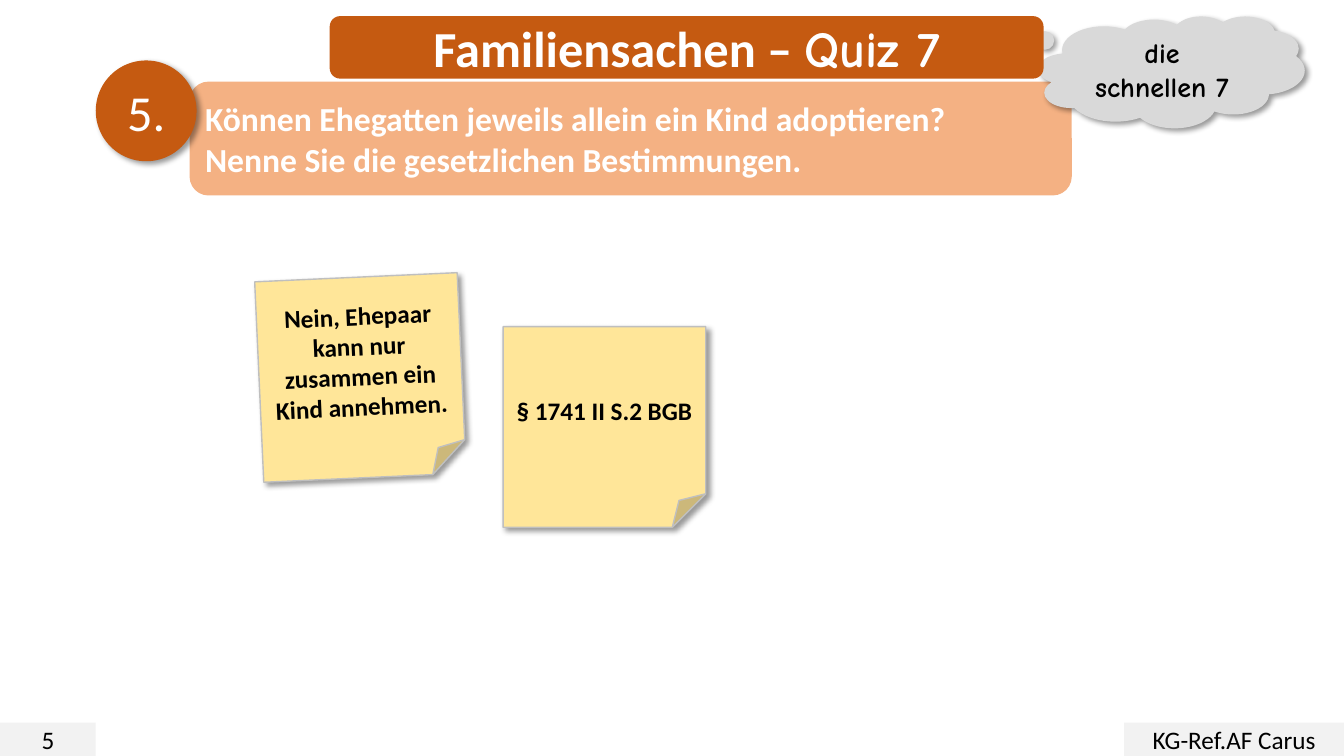
from lxml.etree import SubElement
from pptx import Presentation
from pptx.dml.color import RGBColor
from pptx.enum.shapes import MSO_SHAPE as Shape
from pptx.enum.text import MSO_ANCHOR as Anchor, PP_ALIGN as Align
from pptx.oxml.ns import qn
from pptx.util import Inches, Pt

COLORS = {
    "title": "C55A11",
    "question": "F4B183",
    "cloud": "D9D9D9",
    "note": "FFE699",
    "note_edge": "BFBFBF",
    "footer": "F2F2F2",
    "light": "FFFFFF",
    "dark": "000000",
}
BODY_FONT, COMIC_FONT = "Calibri", "Comic Neue"


def rgb(name):
    return RGBColor.from_string(COLORS[name])


class QuizSlide:
    def __init__(self, presentation):
        self.slide = presentation.slides.add_slide(presentation.slide_layouts[6])

    def box(self, kind, bounds, fill, parent=None):
        shapes = (parent or self.slide).shapes
        shape = shapes.add_shape(kind, *map(Inches, bounds))
        shape.shadow.inherit = False
        shape.fill.solid()
        shape.fill.fore_color.rgb = rgb(fill)
        shape.line.fill.background()
        return shape

    def label(self, shape, paragraphs, size, color="dark", bold=False, align=Align.CENTER):
        """Fill the shape with paragraphs, each a list of (text, font name) runs."""
        frame = shape.text_frame
        frame.word_wrap = True
        frame.vertical_anchor = Anchor.MIDDLE
        for index, runs in enumerate(paragraphs):
            paragraph = frame.add_paragraph() if index else frame.paragraphs[0]
            paragraph.alignment = align
            for text, font_name in runs:
                run = paragraph.add_run()
                run.text = text
                font_format = {"name": font_name, "size": Pt(size), "bold": bold}
                for attribute, value in font_format.items():
                    setattr(run.font, attribute, value)
                run.font.color.rgb = rgb(color)

    def cast_shadow(self, shape):
        effects = shape.element.spPr.find(qn("a:effectLst"))
        shadow = SubElement(effects, qn("a:outerShdw"), blurRad=str(Pt(4)), dist=str(Pt(3)),
                            dir="2700000", algn="tl", rotWithShape="0")
        color = SubElement(shadow, qn("a:srgbClr"), val=COLORS["dark"])
        SubElement(color, qn("a:alpha"), val="40000")

    def footer(self, left, width, text):
        field = self.box(Shape.RECTANGLE, (left, 7.17, width, 0.33), "footer")
        self.label(field, [[(text, BODY_FONT)]], 18)

    def question(self, number, lines):
        group = self.slide.shapes.add_group_shape()
        panel = self.box(Shape.ROUNDED_RECTANGLE, (1.88, 0.81, 8.75, 1.13), "question", group)
        self.label(panel, [[(line, BODY_FONT)] for line in lines], 24, "light", True, Align.LEFT)
        badge = self.box(Shape.OVAL, (0.95, 0.6, 1, 1), "title", group)
        self.cast_shadow(badge)
        self.label(badge, [[(number, BODY_FONT)]], 36, "light")

    def cloud(self, text):
        cloud = self.box(Shape.CLOUD_CALLOUT, (10.3, 0.16, 2.64, 1.11), "cloud")
        cloud.adjustments[0], cloud.adjustments[1] = -0.59, -0.35
        self.cast_shadow(cloud)
        self.label(cloud, [[(text, COMIC_FONT)]], 20, bold=True)

    def sticky_note(self, left, top, text, rotation=0):
        note = self.box(Shape.FOLDED_CORNER, (left, top, 2.01, 1.99), "note")
        note.rotation = rotation
        note.line.color.rgb = rgb("note_edge")
        note.line.width = Pt(1)
        self.cast_shadow(note)
        self.label(note, [[(text, BODY_FONT)]], 18, bold=True)

    def title(self, runs):
        banner = self.box(Shape.ROUNDED_RECTANGLE, (3.27, 0.16, 7.08, 0.62), "title")
        self.label(banner, [runs], 36, "light", bold=True)


def main():
    presentation = Presentation()
    presentation.slide_width = Inches(13.33)
    presentation.slide_height = Inches(7.5)

    quiz = QuizSlide(presentation)
    quiz.footer(0, 0.95, "5")
    quiz.footer(11.15, 2.18, "KG-Ref.AF Carus")
    quiz.question("5.", ["Können Ehegatten jeweils allein ein Kind adoptieren?",
                         "Nenne Sie die gesetzlichen Bestimmungen."])
    quiz.cloud("die schnellen 7")
    quiz.sticky_note(2.57, 2.75, "Nein, Ehepaar kann nur zusammen ein Kind annehmen.", 357.4)
    quiz.sticky_note(4.99, 3.24, "§ 1741 II S.2 BGB")
    quiz.title([("Familiensachen – ", BODY_FONT), ("Quiz 7", COMIC_FONT)])
    presentation.save("out.pptx")


if __name__ == "__main__":
    main()
